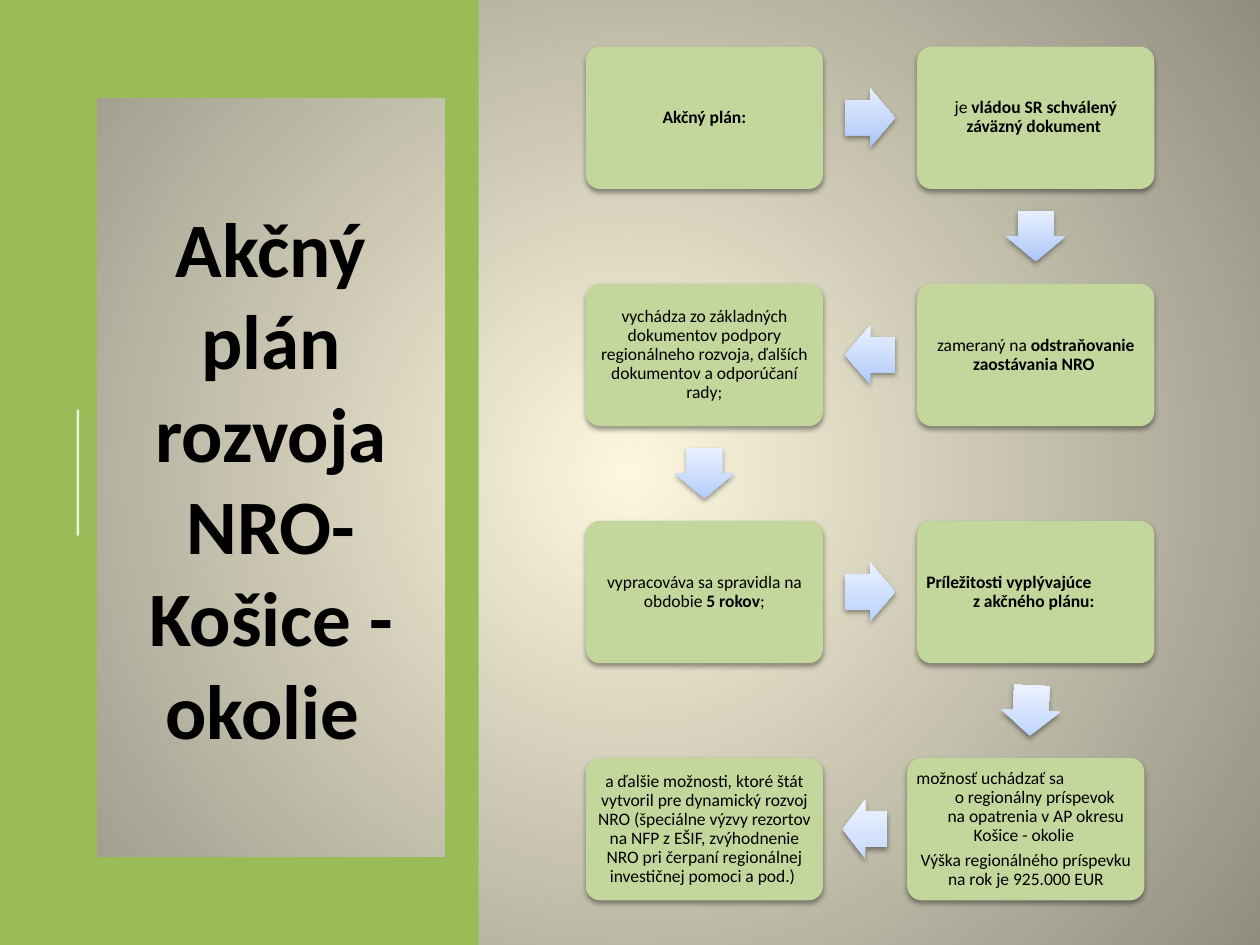
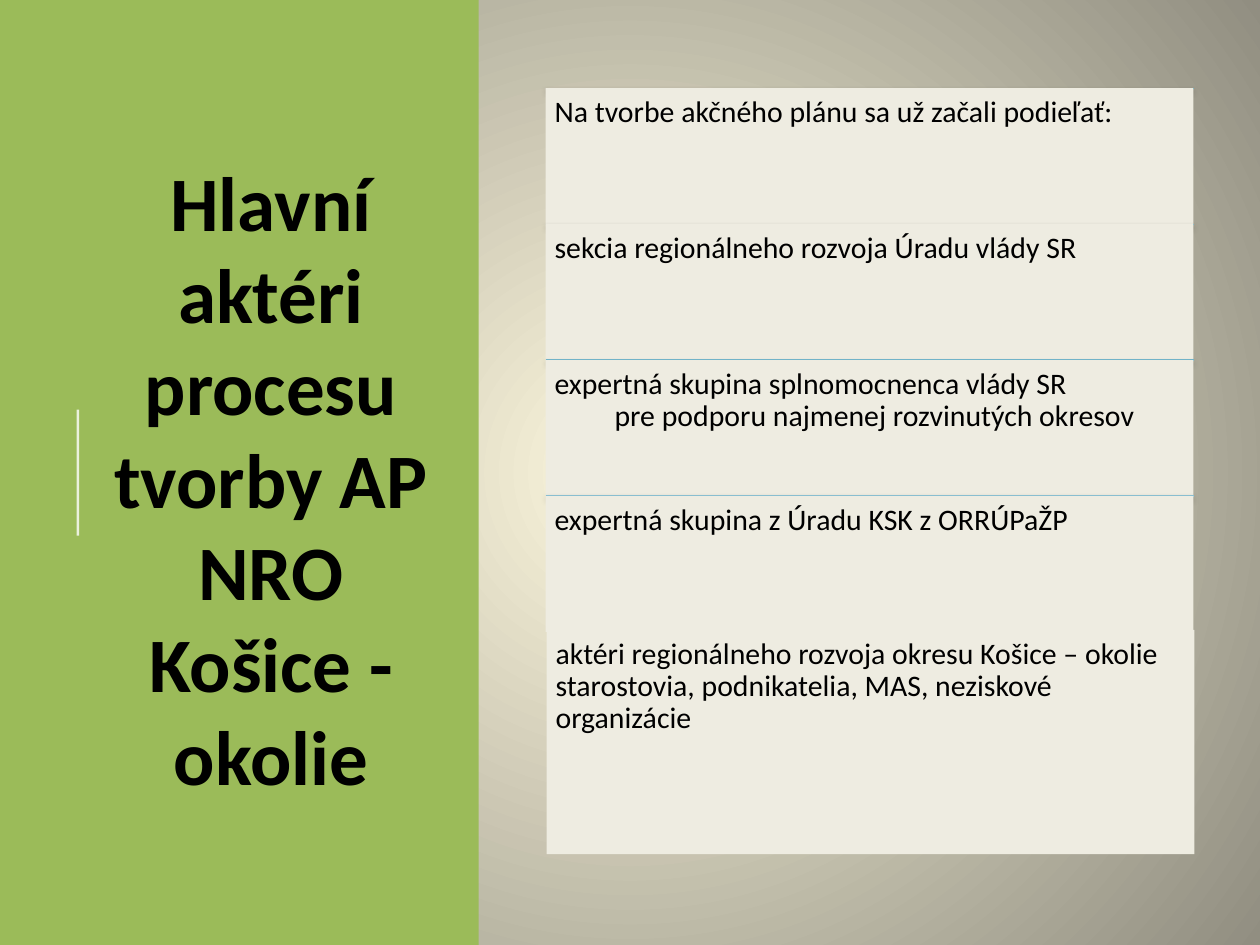
from dataclasses import dataclass
from math import atan2, degrees, hypot

from lxml.etree import SubElement
from pptx import Presentation
from pptx.dml.color import RGBColor
from pptx.enum.shapes import MSO_CONNECTOR as Connector, MSO_SHAPE as Preset
from pptx.enum.text import MSO_ANCHOR as Anchor, PP_ALIGN as Align
from pptx.oxml.ns import qn
from pptx.util import Cm, Pt


@dataclass(frozen=True)
class Theme:
    font: str = "Calibri"
    ink: str = "000000"
    band: str = "9BBB59"
    rule: str = "FFFFFF"
    step: str = "C3D69B"
    row: str = "EEECE1"
    backdrop: tuple = ((0, "FCF7DD"), (100, "918E81"))
    title_size: int = 44
    step_size: int = 10
    row_size: int = 17


@dataclass(frozen=True)
class Para:
    """One paragraph; parts between asterisks are bold."""
    text: str
    align: Align = Align.CENTER
    indent: float = 0
    before: float = 0


class Deck:
    def __init__(self, theme):
        self.theme = theme
        self.presentation = Presentation()
        self.presentation.slide_width = Cm(25.4)
        self.presentation.slide_height = Cm(19.05)
        self.slide = None

    # Slide frame: backdrop, band, rule and title
    def new_slide(self, title, title_on_backdrop=False):
        theme = self.theme
        self.slide = self.presentation.slides.add_slide(self.presentation.slide_layouts[6])
        self.slide.background.fill.solid()
        properties = self.slide._element.find(".//" + qn("p:bgPr"))
        self.gradient(properties, theme.backdrop)
        self.box(Preset.RECTANGLE, 0, 0, 9.65, 19.05, theme.band)
        self.line((1.57, 10.8), (1.57, 8.26), theme.rule, 1.5, opacity=80)

        heading = self.slide.shapes.add_textbox(Cm(1.96), Cm(1.98), Cm(7.01), Cm(15.29))
        if title_on_backdrop:
            shape_properties = heading._element.spPr
            shape_properties.remove(shape_properties.find(qn("a:noFill")))
            heading._element.set("useBgFill", "1")
        self.put_text(heading, [Para(f"*{title}*")], theme.title_size, Anchor.MIDDLE, spacing=1)

    # Elements
    def box(self, preset, left, top, width, height, color, shadow=False):
        shape = self.slide.shapes.add_shape(preset, Cm(left), Cm(top), Cm(width), Cm(height))
        shape.fill.solid()
        shape.fill.fore_color.rgb = RGBColor.from_string(color)
        shape.line.fill.background()
        self.effects(shape, 38 if shadow else 0)
        return shape

    def line(self, start, end, color, weight, opacity=100, shadow=0):
        ends = [Cm(value) for value in (*start, *end)]
        line = self.slide.shapes.add_connector(Connector.STRAIGHT, *ends)
        line.line.color.rgb = RGBColor.from_string(color)
        line.line.width = Pt(weight)
        if opacity < 100:
            tint = line._element.spPr.find(".//" + qn("a:srgbClr"))
            SubElement(tint, qn("a:alpha"), val=str(opacity * 1000))
        self.effects(line, shadow)

    def arrow(self, center, length, angle, colors):
        thickness = 1.19
        arrow = self.box(Preset.RIGHT_ARROW, center[0] - length / 2, center[1] - thickness / 2,
                         length, thickness, colors[0], shadow=True)
        arrow.adjustments[0] = 0.6
        arrow.adjustments[1] = 0.5
        arrow.rotation = angle
        self.gradient(arrow._element.spPr, zip((0, 35, 100), colors), angle=270)

    def put_text(self, shape, paras, size, anchor, inset=None, spacing=0.9):
        frame = shape.text_frame
        frame.word_wrap = True
        frame.vertical_anchor = anchor
        if inset is not None:
            frame.margin_left = frame.margin_right = Cm(inset)
            frame.margin_top = frame.margin_bottom = Cm(inset)
        for index, para in enumerate(paras):
            paragraph = frame.add_paragraph() if index else frame.paragraphs[0]
            paragraph.alignment = para.align
            paragraph.line_spacing = spacing
            paragraph.space_before = Pt(para.before)
            if para.indent:
                paragraph._p.get_or_add_pPr().set("marL", str(Cm(para.indent)))
            for part, words in enumerate(para.text.split("*")):
                if words:
                    run = paragraph.add_run()
                    run.text = words
                    run.font.name = self.theme.font
                    run.font.size = Pt(size)
                    run.font.bold = part % 2 == 1
                    run.font.color.rgb = RGBColor.from_string(self.theme.ink)

    # XML details
    @staticmethod
    def gradient(properties, stops, angle=None):
        """Swap the solid fill for a linear gradient, or a radial one without an angle."""
        solid = properties.find(qn("a:solidFill"))
        fill = solid.makeelement(qn("a:gradFill"), {"rotWithShape": "0"})
        properties.replace(solid, fill)
        stop_list = SubElement(fill, qn("a:gsLst"))
        for position, color in stops:
            stop = SubElement(stop_list, qn("a:gs"), pos=str(position * 1000))
            SubElement(stop, qn("a:srgbClr"), val=color)
        if angle is None:
            circle = SubElement(fill, qn("a:path"), path="circle")
            SubElement(circle, qn("a:fillToRect"), dict.fromkeys("ltrb", "50000"))
        else:
            SubElement(fill, qn("a:lin"), ang=str(angle * 60000), scaled="0")

    @staticmethod
    def effects(shape, opacity):
        effects = SubElement(shape._element.spPr, qn("a:effectLst"))
        if opacity:
            shadow = SubElement(effects, qn("a:outerShdw"), blurRad=str(Pt(3.1)),
                                dist=str(Pt(1.7)), dir="5400000", rotWithShape="0")
            color = SubElement(shadow, qn("a:srgbClr"), val="000000")
            SubElement(color, qn("a:alpha"), val=str(opacity * 1000))


# Content of the action plan flow: left edge, row, text
LEFT, RIGHT = 11.81, 18.49
STEPS = [
    (LEFT, 0, [Para("*Akčný plán:*")]),
    (RIGHT, 0, [Para("je *vládou SR schválený záväzný dokument *")]),
    (RIGHT, 1, [Para("zameraný na *odstraňovanie zaostávania NRO *")]),
    (LEFT, 1, [Para("vychádza zo základných dokumentov podpory regionálneho rozvoja, "
                    "ďalších dokumentov a odporúčaní rady;")]),
    (LEFT, 2, [Para("vypracováva sa spravidla na obdobie *5 rokov*;")]),
    (RIGHT, 2, [Para("*Príležitosti vyplývajúce*", Align.LEFT),
                Para("*z akčného plánu: *")]),
    (RIGHT - 0.2, 3, [Para("možnosť uchádzať sa", Align.LEFT),
                      Para("o regionálny príspevok", indent=0.36),
                      Para("na opatrenia v AP okresu", indent=0.4),
                      Para("Košice - okolie "),
                      Para("Výška regionálného príspevku na rok je 925.000 EUR", before=3.5)]),
    (LEFT, 3, [Para("a ďalšie možnosti, ktoré štát vytvoril pre dynamický rozvoj NRO "
                    "(špeciálne výzvy rezortov na NFP z EŠIF, zvýhodnenie NRO pri čerpaní "
                    "regionálnej investičnej pomoci a pod.) ")]),
]
ARROW_COLORS = [
    ("A5C3FA", "C1D4FA", "E6EEFE"),
    ("A8C5FC", "C2D6FB", "E7EFFF"),
    ("ACC8FD", "C5D8FC", "E8F0FF"),
    ("B1CCFD", "C8DAFD", "E9F0FF"),
    ("B6CFFE", "CBDDFE", "EAF1FF"),
    ("BCD3FE", "CFDFFE", "ECF2FF"),
    ("C3D7FF", "D4E2FE", "EEF4FF"),
]

# Content of the list of participants: divider colour, text
ACTORS = [
    ("449CB4", [Para("Na tvorbe akčného plánu sa už začali podieľať:", Align.LEFT)]),
    ("59A8BF", [Para("sekcia regionálneho rozvoja Úradu vlády SR", Align.LEFT)]),
    ("71B3C8", [Para("expertná skupina splnomocnenca vlády SR", Align.LEFT),
                Para("pre podporu najmenej rozvinutých okresov", Align.LEFT, indent=1.21)]),
    ("89BED0", [Para("expertná skupina z Úradu KSK z ORRÚPaŽP", Align.LEFT)]),
]
LOCAL_ACTORS = [Para("aktéri regionálneho rozvoja okresu Košice – okolie starostovia, "
                     "podnikatelia, MAS, neziskové organizácie", Align.LEFT)]


def action_plan(deck):
    deck.new_slide("Akčný plán rozvoja NRO- Košice - okolie ", title_on_backdrop=True)
    width, height, first_top, pitch = 4.78, 2.87, 0.94, 4.78
    centers = []
    for left, row, paras in STEPS:
        top = first_top + row * pitch
        step = deck.box(Preset.ROUNDED_RECTANGLE, left, top, width, height,
                        deck.theme.step, shadow=True)
        step.adjustments[0] = 0.1
        deck.put_text(step, paras, deck.theme.step_size, Anchor.MIDDLE, inset=0.1)
        centers.append((left + width / 2, top + height / 2))

    # Each arrow sits midway between two steps and fills about half the gap
    for (x1, y1), (x2, y2), colors in zip(centers, centers[1:], ARROW_COLORS):
        gap = hypot(x2 - x1, y2 - y1) - (width if y1 == y2 else height)
        angle = degrees(atan2(y2 - y1, x2 - x1))
        deck.arrow(((x1 + x2) / 2, (y1 + y2) / 2), 0.53 * gap, angle, colors)


def main_actors(deck):
    deck.new_slide("Hlavní aktéri procesu tvorby AP NRO Košice - okolie")
    left, first_top, width, pitch = 11, 1.78, 13.06, 2.74

    def add_row(row_left, top, height, paras):
        row = deck.box(Preset.RECTANGLE, row_left, top, width, height, deck.theme.row)
        deck.put_text(row, paras, deck.theme.row_size, Anchor.TOP, inset=0.18)

    for index, (divider, paras) in enumerate(ACTORS):
        top = first_top + index * pitch
        deck.line((left, top), (left + width, top), divider, 0.75, shadow=35)
        add_row(left, top, pitch, paras)
    add_row(left + 0.02, 12.7, 4.52, LOCAL_ACTORS)


def main():
    deck = Deck(Theme())
    action_plan(deck)
    main_actors(deck)
    deck.presentation.save("out.pptx")


if __name__ == "__main__":
    main()
